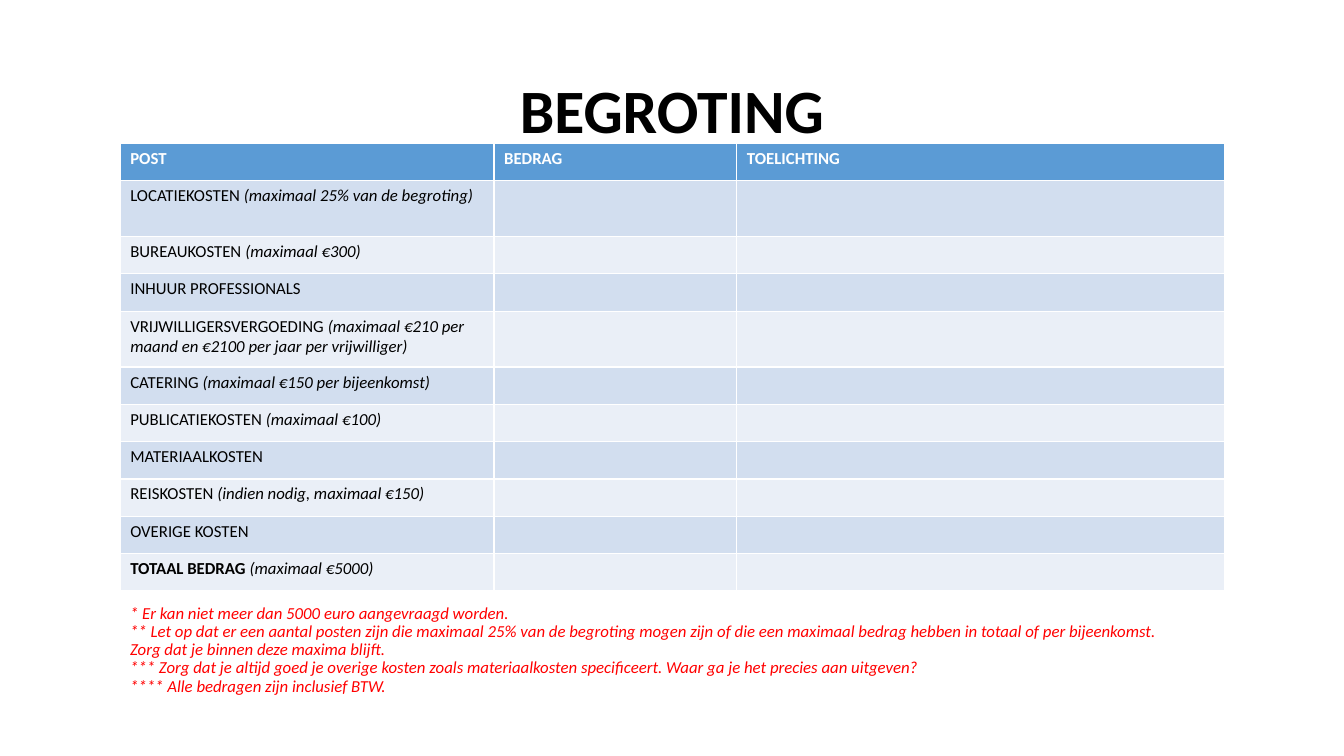
from lxml.etree import SubElement
from pptx import Presentation
from pptx.dml.color import RGBColor
from pptx.enum.text import MSO_ANCHOR, PP_ALIGN
from pptx.oxml.ns import qn
from pptx.util import Cm, Pt

FONT = "Calibri"
BLACK = RGBColor(0x00, 0x00, 0x00)
WHITE = RGBColor(0xFF, 0xFF, 0xFF)
RED = RGBColor(0xFF, 0x00, 0x00)
HEADER_BLUE = RGBColor(0x5B, 0x9B, 0xD5)
BANDS = (RGBColor(0xD2, 0xDE, 0xEF), RGBColor(0xEA, 0xEF, 0xF7))

HEADINGS = ("POST", "BEDRAG", "TOELICHTING")
COLUMN_WIDTHS = (9.42, 6.12, 12.3)
ROW_HEIGHT, TALL_ROW_HEIGHT = 0.94, 1.41
TALL_POSTS = ("LOCATIEKOSTEN", "VRIJWILLIGERSVERGOEDING")
TOTAL = "TOTAAL BEDRAG"
POSTS = (
    ("LOCATIEKOSTEN", "(maximaal 25% van de begroting)"),
    ("BUREAUKOSTEN", "(maximaal €300)"),
    ("INHUUR PROFESSIONALS", ""),
    ("VRIJWILLIGERSVERGOEDING",
     "(maximaal €210 per maand en €2100 per jaar per vrijwilliger)"),
    ("CATERING", "(maximaal €150 per bijeenkomst)"),
    ("PUBLICATIEKOSTEN", "(maximaal €100)"),
    ("MATERIAALKOSTEN", ""),
    ("REISKOSTEN", "(indien nodig, maximaal €150)"),
    ("OVERIGE KOSTEN", ""),
    (TOTAL, "(maximaal €5000)"),
)
REMARKS = (
    "Er kan niet meer dan 5000 euro aangevraagd worden.",
    "Let op dat er een aantal posten zijn die maximaal 25% van de begroting "
    "mogen zijn of die een maximaal bedrag hebben in totaal of per "
    "bijeenkomst. Zorg dat je binnen deze maxima blijft.",
    "Zorg dat je altijd goed je overige kosten zoals materiaalkosten "
    "specificeert. Waar ga je het precies aan uitgeven?",
    "Alle bedragen zijn inclusief BTW.",
)


def set_font(font, size, color, bold=False):
    font.name, font.size, font.bold = FONT, Pt(size), bold
    font.color.rgb = color


def place_title(slide, left, top, width, height):
    title = slide.shapes.title
    title.left, title.top, title.width, title.height = left, top, width, height
    title.text_frame.vertical_anchor = MSO_ANCHOR.MIDDLE
    heading = title.text_frame.paragraphs[0]
    heading.text = "BEGROTING"
    heading.alignment = PP_ALIGN.CENTER
    heading.line_spacing = 0.9
    set_font(heading.font, 44, BLACK, bold=True)


def fill_cell(cell, background):
    cell.fill.solid()
    cell.fill.fore_color.rgb = background


def write_post(paragraph, post, limit):
    """Write the name of a post, followed by its limit in italics."""
    set_font(paragraph.font, 12, BLACK)
    name = paragraph.add_run()
    name.text = f"{post} " if limit else post
    if post == TOTAL:
        name.font.bold = True
    if limit:
        condition = paragraph.add_run()
        condition.text = limit
        condition.font.italic = True


def add_budget(slide, left, top, width, height):
    budget = slide.shapes.add_table(
        len(POSTS) + 1, len(HEADINGS), left, top, width, height).table
    for column, column_width in zip(budget.columns, COLUMN_WIDTHS):
        column.width = Cm(column_width)

    budget.rows[0].height = Cm(ROW_HEIGHT)
    for cell, heading in zip(budget.rows[0].cells, HEADINGS):
        fill_cell(cell, HEADER_BLUE)
        paragraph = cell.text_frame.paragraphs[0]
        paragraph.text = heading
        set_font(paragraph.font, 12, WHITE, bold=True)

    for index, (post, limit) in enumerate(POSTS):
        row = budget.rows[index + 1]
        row.height = Cm(TALL_ROW_HEIGHT if post in TALL_POSTS else ROW_HEIGHT)
        for cell in row.cells:
            fill_cell(cell, BANDS[index % 2])
        post_cell, *blank_cells = row.cells
        write_post(post_cell.text_frame.paragraphs[0], post, limit)
        for cell in blank_cells:
            # Small text size keeps blank cells from stretching the row
            SubElement(cell.text_frame.paragraphs[0]._p,
                       qn("a:endParaRPr"), sz="1200")


def add_remarks(slide, left, top, width, height):
    frame = slide.shapes.add_textbox(left, top, width, height).text_frame
    frame.word_wrap = True
    for number, remark in enumerate(REMARKS, start=1):
        paragraph = frame.paragraphs[0] if number == 1 else frame.add_paragraph()
        paragraph.text = f"{'*' * number} {remark}"
        paragraph.line_spacing = 0.9
        set_font(paragraph.font, 12, RED)
        paragraph.font.italic = True


def main():
    presentation = Presentation()
    presentation.slide_width, presentation.slide_height = Cm(33.87), Cm(19.05)
    slide = presentation.slides.add_slide(presentation.slide_layouts[5])
    place_title(slide, Cm(2.33), Cm(1.01), Cm(29.21), Cm(3.68))
    add_budget(slide, Cm(3.03), Cm(3.61), Cm(sum(COLUMN_WIDTHS)), Cm(11.28))
    add_remarks(slide, Cm(3.03), Cm(15.12), Cm(26.45), Cm(2.57))
    presentation.save("out.pptx")


if __name__ == "__main__":
    main()
